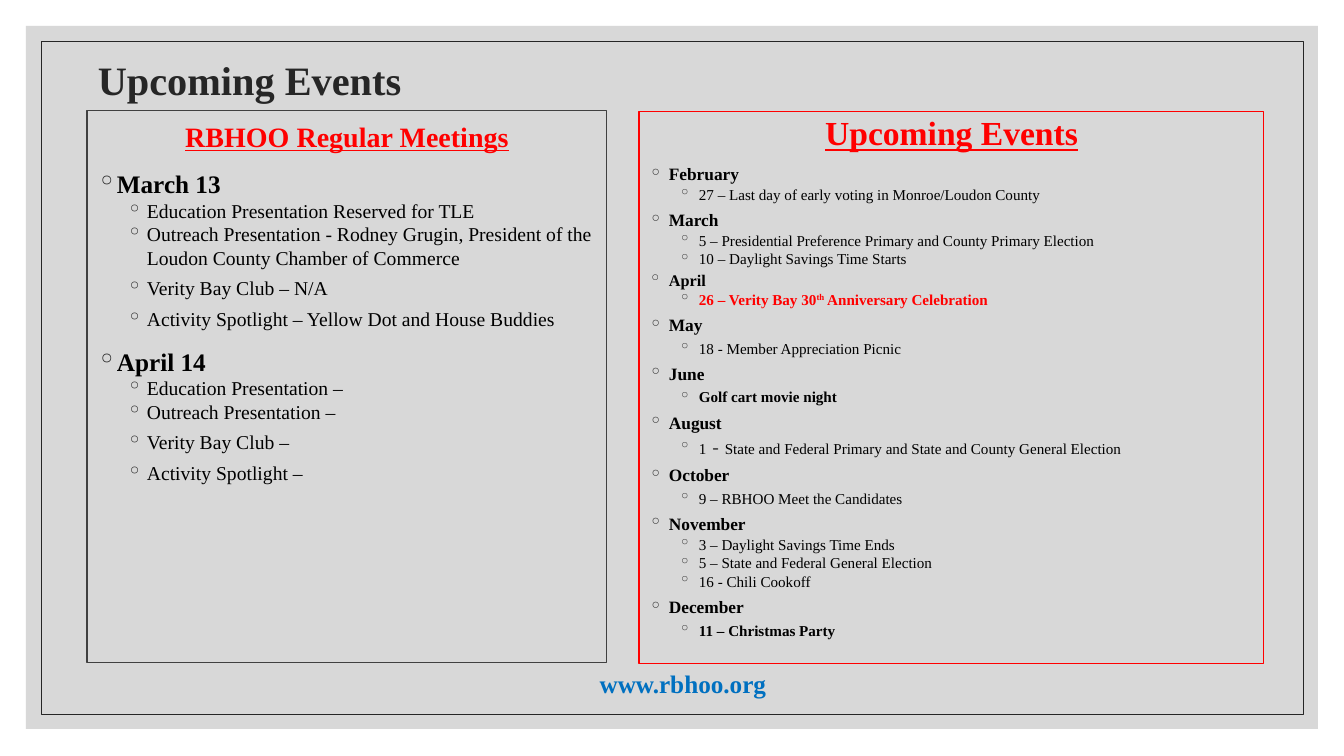
from dataclasses import dataclass, replace

from lxml.etree import SubElement
from pptx import Presentation
from pptx.dml.color import RGBColor
from pptx.enum.shapes import MSO_SHAPE
from pptx.enum.text import MSO_ANCHOR, PP_ALIGN
from pptx.oxml.ns import qn
from pptx.util import Emu, Pt

PX = 914400 / 100.8


@dataclass(frozen=True)
class Theme:
    font: str = "Times New Roman"
    dash_font: str = "Quicksand"
    ink: str = "262626"
    black: str = "000000"
    red: str = "FF0000"
    blue: str = "0070C0"
    panel: str = "BFBFBF"
    outline: str = "404040"
    title: float = 28.8
    events_heading: float = 24
    meetings_heading: float = 20
    meeting_date: float = 18
    website: float = 18
    meeting_item: float = 14
    dash: float = 13.9
    month: float = 12.4
    small_month: float = 11.6
    event: float = 10.8


THEME = Theme()


@dataclass(frozen=True)
class Style:
    size: float
    color: str = THEME.black
    bold: bool = False
    underline: bool = False
    font: str = THEME.font
    baseline: int = 0
    align: PP_ALIGN = PP_ALIGN.LEFT
    spacing: float = 1.0
    indent: int = 0
    level: int = 0


MEETINGS_HEADING = Style(THEME.meetings_heading, THEME.red, True, True,
                         align=PP_ALIGN.CENTER, spacing=1.1)
MEETING_DATE = Style(THEME.meeting_date, bold=True, spacing=1.1, indent=20)
MEETING_ITEM = Style(THEME.meeting_item, indent=50, level=1)
EVENTS_HEADING = replace(MEETINGS_HEADING, size=THEME.events_heading, spacing=0.9)
MONTH = Style(THEME.month, bold=True, spacing=0.9, indent=20)
SMALL_MONTH = replace(MONTH, size=THEME.small_month)
EVENT = Style(THEME.event, spacing=0.8, indent=50, level=1)
BOLD_EVENT = replace(EVENT, bold=True)
RED_EVENT = replace(BOLD_EVENT, color=THEME.red)
ORDINAL = replace(RED_EVENT, baseline=30000)
DASH = replace(EVENT, size=THEME.dash, font=THEME.dash_font)
TITLE = Style(THEME.title, THEME.ink, True, spacing=0.9)
WEBSITE = Style(THEME.website, THEME.blue, True, align=PP_ALIGN.CENTER)

MEETINGS = [
    (MEETINGS_HEADING, 0, "RBHOO Regular Meetings"),
    (MEETING_DATE, 9, "March 13"),
    (MEETING_ITEM, 0, "Education Presentation Reserved for TLE"),
    (MEETING_ITEM, 0, "Outreach Presentation - Rodney Grugin, President of the "
                      "Loudon County Chamber of Commerce"),
    (MEETING_ITEM, 5, "Verity Bay Club – N/A"),
    (MEETING_ITEM, 5, "Activity Spotlight – Yellow Dot and House Buddies"),
    (MEETING_DATE, 9, "April 14"),
    (MEETING_ITEM, 0, "Education Presentation –"),
    (MEETING_ITEM, 0, "Outreach Presentation –"),
    (MEETING_ITEM, 5, "Verity Bay Club –"),
    (MEETING_ITEM, 5, "Activity Spotlight –"),
]

EVENTS = [
    (EVENTS_HEADING, 0, "Upcoming Events"),
    (MONTH, 9, "February"),
    (EVENT, 3, "27 – Last day of early voting in Monroe/Loudon County"),
    (MONTH, 6, "March"),
    (EVENT, 3, "5 – Presidential Preference Primary and County Primary Election"),
    (EVENT, 3, "10 – Daylight Savings Time Starts"),
    (SMALL_MONTH, 3, "April"),
    (RED_EVENT, 3, "26 – Verity Bay 30", ("th", ORDINAL), " Anniversary Celebration"),
    (MONTH, 6, "May"),
    (EVENT, 5, "18 - Member Appreciation Picnic"),
    (MONTH, 6, "June"),
    (BOLD_EVENT, 5, "Golf cart movie night"),
    (MONTH, 6, "August"),
    (EVENT, 5, "1", (" - ", DASH),
     "State and Federal Primary and State and County General Election"),
    (MONTH, 6, "October"),
    (EVENT, 5, "9 – RBHOO Meet the Candidates"),
    (MONTH, 6, "November"),
    (EVENT, 3, "3 – Daylight Savings Time Ends"),
    (EVENT, 3, "5 – State and Federal General Election"),
    (EVENT, 3, "16 - Chili Cookoff"),
    (MONTH, 6, "December"),
    (BOLD_EVENT, 5, "11 – Christmas Party"),
]


def px(length):
    return Emu(round(length * PX))


def rgb(color):
    return RGBColor.from_string(color)


def add_rectangle(slide, bounds, fill=None, alpha=100, line=None, width=0.75):
    rectangle = slide.shapes.add_shape(MSO_SHAPE.RECTANGLE, *map(px, bounds))
    rectangle.shadow.inherit = False
    if fill:
        rectangle.fill.solid()
        rectangle.fill.fore_color.rgb = rgb(fill)
        color = rectangle.fill._xPr.find(qn("a:solidFill"))[0]
        SubElement(color, qn("a:alpha"), val=str(alpha * 1000))
    else:
        rectangle.fill.background()
    if line:
        rectangle.line.color.rgb = rgb(line)
        rectangle.line.width = Pt(width)
    else:
        rectangle.line.fill.background()
    return rectangle


def add_bullet(paragraph, indent):
    properties = paragraph._p.get_or_add_pPr()
    properties.set("marL", str(px(indent)))
    properties.set("indent", str(-px(20)))
    color = SubElement(properties, qn("a:buClr"))
    SubElement(color, qn("a:srgbClr"), val=THEME.ink)
    SubElement(properties, qn("a:buChar"), char="◦")


def format_run(run, style):
    font = run.font
    font.name = style.font
    font.size = Pt(style.size)
    font.bold = style.bold
    font.underline = style.underline
    font.color.rgb = rgb(style.color)
    if style.baseline:
        run._r.get_or_add_rPr().set("baseline", str(style.baseline))


def write_entries(frame, entries, anchor=MSO_ANCHOR.TOP):
    frame.word_wrap = True
    frame.vertical_anchor = anchor
    for number, (style, before, *parts) in enumerate(entries):
        paragraph = frame.add_paragraph() if number else frame.paragraphs[0]
        if style.indent:
            add_bullet(paragraph, style.indent)
        paragraph.level = style.level
        paragraph.alignment = style.align
        paragraph.line_spacing = style.spacing
        paragraph.space_before = Pt(before)
        for part in parts:
            text, run_style = (part, style) if isinstance(part, str) else part
            run = paragraph.add_run()
            run.text = text
            format_run(run, run_style)


def add_label(slide, bounds, text, style, anchor=MSO_ANCHOR.TOP):
    label = slide.shapes.add_textbox(*map(px, bounds))
    write_entries(label.text_frame, [(style, 0, text)], anchor)


def add_list_panel(slide, bounds, line, entries):
    panel = add_rectangle(slide, bounds, line=line)
    write_entries(panel.text_frame, entries)


def main():
    deck = Presentation()
    deck.slide_width, deck.slide_height = px(1344), px(756)
    slide = deck.slides.add_slide(deck.slide_layouts[6])
    add_rectangle(slide, (26, 26, 1292, 703), fill=THEME.panel, alpha=60)
    add_rectangle(slide, (41, 41, 1262, 673), line=THEME.ink, width=0.5)
    add_label(slide, (88, 53, 1138, 58), "Upcoming Events", TITLE, MSO_ANCHOR.MIDDLE)
    add_list_panel(slide, (87, 111, 520, 552), THEME.outline, MEETINGS)
    add_label(slide, (22, 663, 1322, 40), "www.rbhoo.org", WEBSITE)
    add_list_panel(slide, (639, 112, 625, 552), THEME.red, EVENTS)
    deck.save("out.pptx")


if __name__ == "__main__":
    main()
